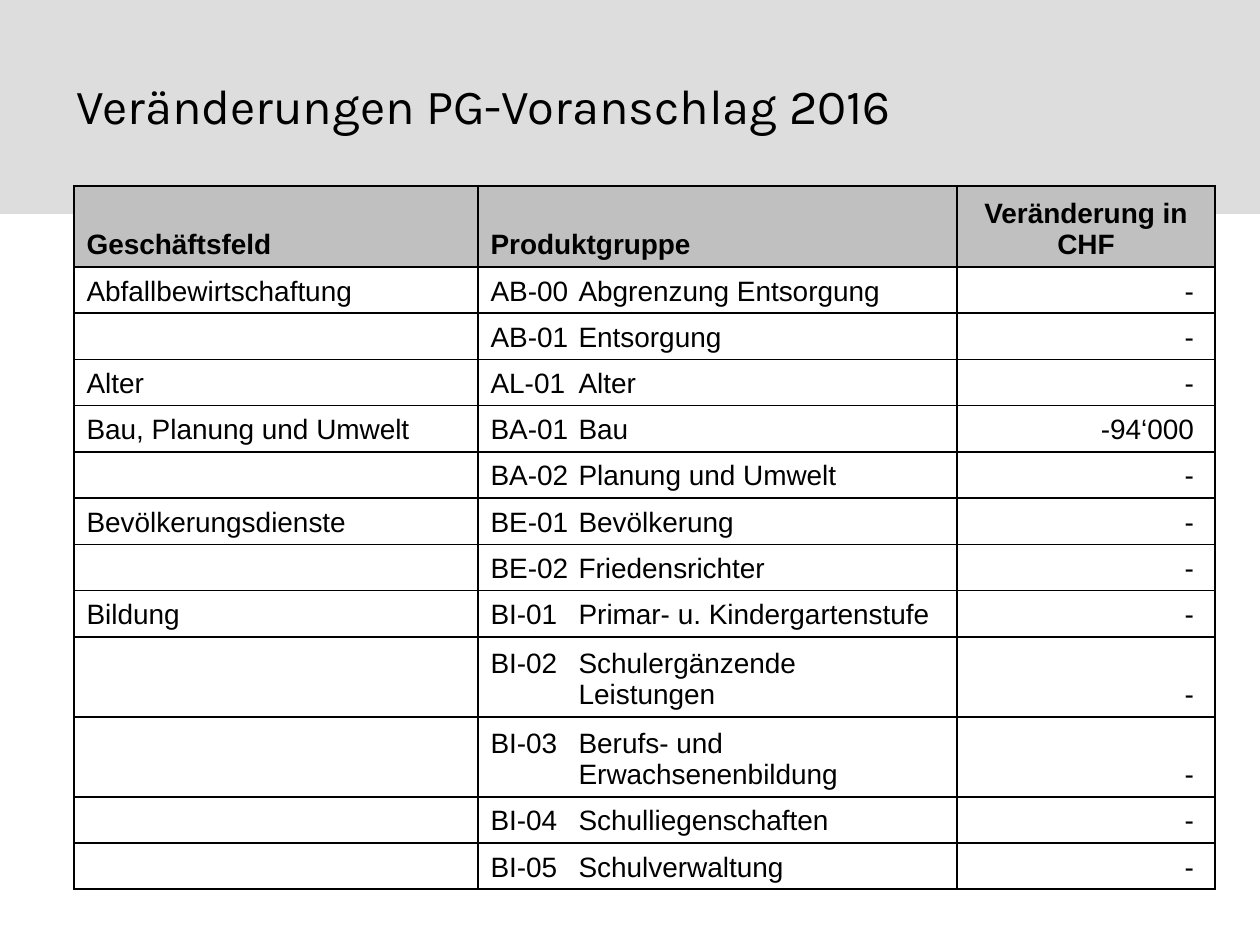
from lxml.etree import SubElement
from pptx import Presentation
from pptx.dml.color import RGBColor
from pptx.enum.shapes import MSO_SHAPE
from pptx.enum.text import MSO_ANCHOR, PP_ALIGN
from pptx.oxml.ns import qn
from pptx.util import Pt


def px(n):
    return round(n * 914400 / 126)


def paint(color, code):
    color.rgb = RGBColor.from_string(code)


deck = Presentation()
deck.slide_width, deck.slide_height = px(1260), px(945)
slide = deck.slides.add_slide(deck.slide_layouts[6])

band = slide.shapes.add_shape(MSO_SHAPE.RECTANGLE, 0, 0, px(1260), px(214))
band.shadow.inherit = False
band.fill.solid()
paint(band.fill.fore_color, "DDDDDD")
band.line.fill.background()

title = slide.shapes.add_textbox(px(64), px(26), px(1134), px(158))
frame = title.text_frame
frame.word_wrap = True
frame.vertical_anchor = MSO_ANCHOR.MIDDLE
run = frame.paragraphs[0].add_run()
run.text = "Veränderungen PG-Voranschlag 2016"
for key, val in {"name": "Karla", "size": Pt(28)}.items():
    setattr(run.font, key, val)
paint(run.font.color, "000000")

rows = [
    ("Geschäftsfeld", "Produktgruppe", "Veränderung in CHF"),
    ("Abfallbewirtschaftung", "AB-00\tAbgrenzung Entsorgung", "-"),
    ("", "AB-01\tEntsorgung", "-"),
    ("Alter", "AL-01\tAlter", "-"),
    ("Bau, Planung und Umwelt", "BA-01\tBau", "-94‘000"),
    ("", "BA-02\tPlanung und Umwelt", "-"),
    ("Bevölkerungsdienste", "BE-01\tBevölkerung", "-"),
    ("", "BE-02\tFriedensrichter", "-"),
    ("Bildung", "BI-01\tPrimar- u. Kindergartenstufe", "-"),
    ("", "BI-02\tSchulergänzende\vLeistungen", "-"),
    ("", "BI-03\tBerufs- und\vErwachsenenbildung", "-"),
    ("", "BI-04\tSchulliegenschaften", "-"),
    ("", "BI-05\tSchulverwaltung", "-"),
]
cols = [404, 479, 258]
tall = {0: 81, 9: 80, 10: 80}
highs = [tall.get(i, 46) for i in range(len(rows))]
grid = slide.shapes.add_table(
    len(rows), len(cols), px(74), px(186), px(sum(cols)), px(sum(highs))
).table
grid.first_row = grid.horz_banding = False
for col, wide in zip(grid.columns, cols):
    col.width = px(wide)

for i, row in enumerate(rows):
    grid.rows[i].height = px(highs[i])
    for j, text in enumerate(row):
        cell = grid.cell(i, j)
        cell.vertical_anchor = MSO_ANCHOR.BOTTOM
        props = cell._tc.get_or_add_tcPr()
        for side in ("lnL", "lnR", "lnT", "lnB"):
            line = SubElement(props, qn(f"a:{side}"), w=str(Pt(1)))
            ink = SubElement(line, qn("a:solidFill"))
            SubElement(ink, qn("a:srgbClr"), val="000000")
        if i == 0:
            cell.fill.solid()
            paint(cell.fill.fore_color, "C0C0C0")
        else:
            cell.fill.background()
        cell.text = text
        para = cell.text_frame.paragraphs[0]
        if j == 2:
            para.alignment = PP_ALIGN.RIGHT if i else PP_ALIGN.CENTER
            if i:
                cell.margin_right = px(21)
        if i and j == 1:
            ends = para._p.get_or_add_pPr()
            ends.set("marL", str(px(88)))
            ends.set("indent", str(px(-88)))
        for run in para.runs:
            for key, val in {"name": "Arial", "size": Pt(16), "bold": i == 0}.items():
                setattr(run.font, key, val)
            paint(run.font.color, "000000")
        SubElement(para._p, qn("a:endParaRPr"), sz="1600")

deck.save("out.pptx")
